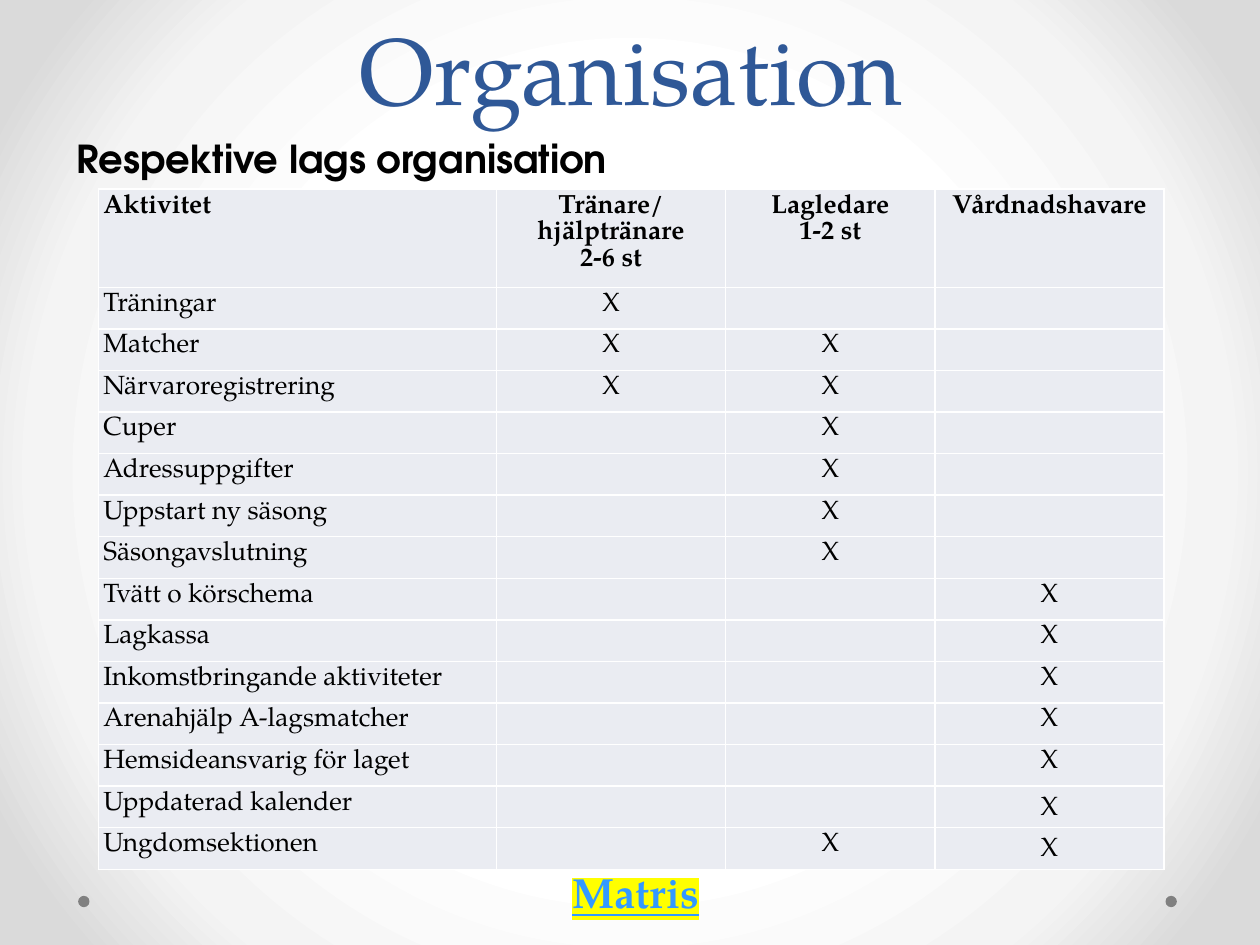
from lxml import etree
from pptx import Presentation
from pptx.dml.color import RGBColor
from pptx.enum.shapes import MSO_SHAPE as Shape
from pptx.enum.text import MSO_ANCHOR as Anchor, PP_ALIGN as Align
from pptx.oxml import parse_xml
from pptx.oxml.ns import nsdecls, qn
from pptx.util import Inches, Pt

COLORS = {
    "title": "2F5897", "text": "000000", "cell": "EAECF2", "border": "FFFFFF",
    "dot": "808080", "link": "3399FF", "highlight": "FFFF00",
}
BACKGROUND_STOPS = [(50, "FFFFFF"), (76, "F4F4F4"), (92, "DADADA")]
SERIF, SANS = "TeX Gyre Pagella", "TeX Gyre Adventor"

HEADERS = ["Aktivitet", "Tränare/\nhjälptränare\n2-6 st", "Lagledare\n1-2 st", "Vårdnadshavare"]
COACH, LEADER, GUARDIAN = 1, 2, 3
ACTIVITIES = [
    ("Träningar", {COACH}),
    ("Matcher", {COACH, LEADER}),
    ("Närvaroregistrering", {COACH, LEADER}),
    ("Cuper", {LEADER}),
    ("Adressuppgifter", {LEADER}),
    ("Uppstart ny säsong", {LEADER}),
    ("Säsongavslutning", {LEADER}),
    ("Tvätt o körschema", {GUARDIAN}),
    ("Lagkassa", {GUARDIAN}),
    ("Inkomstbringande aktiviteter", {GUARDIAN}),
    ("Arenahjälp A-lagsmatcher", {GUARDIAN}),
    ("Hemsideansvarig för laget", {GUARDIAN}),
    ("Uppdaterad kalender", {GUARDIAN}),
    ("Ungdomsektionen", {LEADER, GUARDIAN}),
]
LOW_MARKS = {("Uppdaterad kalender", GUARDIAN), ("Ungdomsektionen", GUARDIAN)}
COLUMN_WIDTHS = [3.16, 1.82, 1.66, 1.82]
TABLE_HEIGHT, HEADER_HEIGHT = 5.05, 0.78


def set_all(target, values):
    for name, value in values.items():
        setattr(target, name, value)


class SlideBuilder:
    def __init__(self, slide):
        self.slide = slide

    def background(self):
        """Fill the background with a gradient that spreads from the centre."""
        self.slide.background.fill.solid()
        properties = self.slide.element.find(".//" + qn("p:bgPr"))
        stops = "".join(
            f'<a:gs pos="{position * 1000}"><a:srgbClr val="{color}"/></a:gs>'
            for position, color in BACKGROUND_STOPS)
        properties.replace(properties[0], parse_xml(
            f'<a:gradFill {nsdecls("a")} rotWithShape="1"><a:gsLst>{stops}</a:gsLst>'
            '<a:path path="circle"><a:fillToRect l="50000" t="50000" r="50000" b="50000"/>'
            '</a:path></a:gradFill>'))

    def fill_text(self, frame, text, size, font=SERIF, color="text", align=Align.LEFT,
                  spacing=None, **font_values):
        frame.word_wrap = True
        frame.text = text
        for paragraph in frame.paragraphs:
            set_all(paragraph, {"alignment": align, "line_spacing": spacing})
            paragraph.font.size = Pt(size)
            for run in paragraph.runs:
                set_all(run.font, {"name": font, "size": Pt(size), **font_values})
                run.font.color.rgb = RGBColor.from_string(COLORS[color])

    def place(self, shape, left, top, width, height):
        set_all(shape, {"left": Inches(left), "top": Inches(top),
                        "width": Inches(width), "height": Inches(height)})

    def title(self, text, box):
        title = self.slide.shapes.title
        self.place(title, *box)
        title.text_frame.vertical_anchor = Anchor.BOTTOM
        self.fill_text(title.text_frame, text, 54, color="title", align=Align.CENTER,
                       spacing=Pt(58))

    def text(self, text, box, size, **style):
        shape = self.slide.shapes.add_textbox(*map(Inches, box))
        self.fill_text(shape.text_frame, text, size, **style)
        return shape

    def highlight(self, shape, color):
        for run in shape.text_frame.paragraphs[0].runs:
            fill = run.font._element.find(qn("a:solidFill"))
            fill.addnext(parse_xml(
                f'<a:highlight {nsdecls("a")}><a:srgbClr val="{COLORS[color]}"/></a:highlight>'))

    def dot(self, left, top, size):
        dot = self.slide.shapes.add_shape(Shape.OVAL, *map(Inches, (left, top, size, size)))
        dot.shadow.inherit = False
        dot.fill.solid()
        dot.fill.fore_color.rgb = RGBColor.from_string(COLORS["dot"])
        dot.line.fill.background()

    def cell(self, cell, text, **style):
        margins = ("margin_left", "margin_top", "margin_right", "margin_bottom")
        set_all(cell, dict.fromkeys(margins, Inches(0.04)))
        self.fill_text(cell.text_frame, text, 15, spacing=Pt(15), **style)
        properties = cell._tc.get_or_add_tcPr()
        for side in ("lnL", "lnR", "lnT", "lnB"):
            line = etree.SubElement(properties, qn(f"a:{side}"), w=str(Pt(1)))
            fill = etree.SubElement(line, qn("a:solidFill"))
            etree.SubElement(fill, qn("a:srgbClr"), val=COLORS["border"])
        cell.fill.solid()
        cell.fill.fore_color.rgb = RGBColor.from_string(COLORS["cell"])

    def responsibility_table(self, left, top):
        rows = [HEADERS] + [
            [name] + ["X" if role in roles else "" for role in (COACH, LEADER, GUARDIAN)]
            for name, roles in ACTIVITIES]
        table = self.slide.shapes.add_table(
            len(rows), len(HEADERS), Inches(left), Inches(top),
            Inches(sum(COLUMN_WIDTHS)), Inches(TABLE_HEIGHT)).table
        for column, width in zip(table.columns, COLUMN_WIDTHS):
            column.width = Inches(width)
        row_height = (TABLE_HEIGHT - HEADER_HEIGHT) / len(ACTIVITIES)
        for row_index, texts in enumerate(rows):
            table.rows[row_index].height = Inches(row_height if row_index else HEADER_HEIGHT)
            for column_index, text in enumerate(texts):
                cell = table.cell(row_index, column_index)
                self.cell(cell, text, bold=row_index == 0,
                          align=Align.CENTER if column_index else Align.LEFT)
                if (texts[0], column_index) in LOW_MARKS:
                    cell.vertical_anchor = Anchor.BOTTOM


def main():
    presentation = Presentation()
    set_all(presentation, {"slide_width": Inches(10), "slide_height": Inches(7.5)})
    slide = presentation.slides.add_slide(presentation.slide_layouts[5])
    builder = SlideBuilder(slide)
    builder.background()
    for left in (9.25, 0.62):
        builder.dot(left, 7.11, 0.09)
    builder.text("Respektive lags organisation", (0.51, 1.02, 9, 0.48), 22, font=SANS, bold=True)
    builder.title("Organisation", (0.51, -0.19, 9, 1.23))
    builder.responsibility_table(0.78, 1.5)
    matrix = builder.text("Matris", (2.88, 6.83, 4.33, 0.5), 24, color="link",
                          align=Align.CENTER, bold=True, underline=True)
    builder.highlight(matrix, "highlight")
    presentation.save("out.pptx")


if __name__ == "__main__":
    main()
